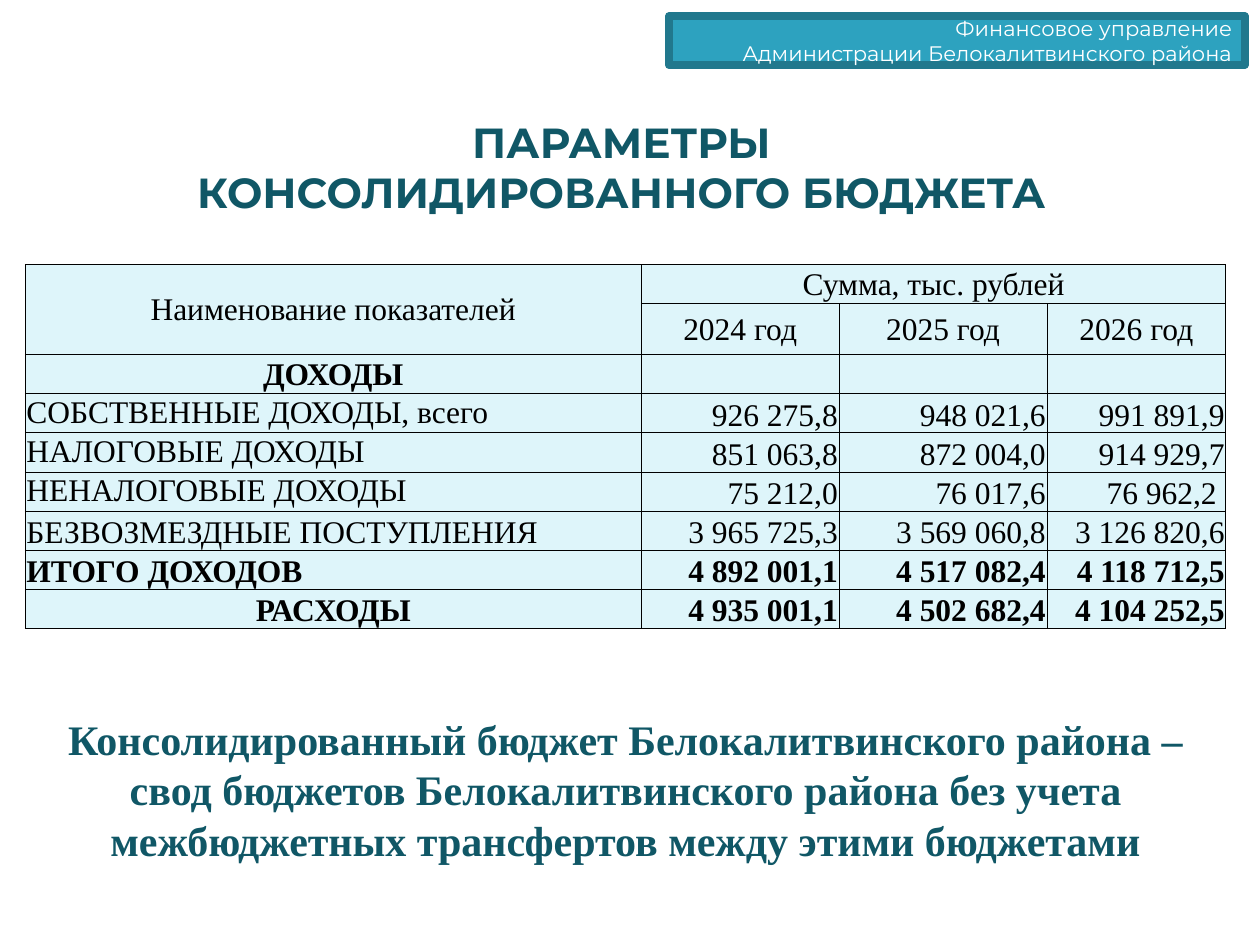
from dataclasses import dataclass

from lxml.etree import SubElement
from pptx import Presentation
from pptx.dml.color import RGBColor
from pptx.enum.shapes import MSO_SHAPE
from pptx.enum.text import MSO_ANCHOR, PP_ALIGN
from pptx.oxml.ns import qn
from pptx.util import Inches, Pt


@dataclass(frozen=True)
class Theme:
    heading: str = "105766"
    banner: str = "2DA2BF"
    banner_line: str = "21788D"
    banner_text: str = "FFFFFF"
    cell: str = "DEF5FA"
    ink: str = "000000"
    sans: str = "Montserrat"
    serif: str = "Times New Roman"
    large: int = 24
    medium: int = 18
    small: int = 12


theme = Theme()
deck = Presentation()
deck.slide_width, deck.slide_height = Inches(10), Inches(7.5)
page = deck.slides.add_slide(deck.slide_layouts[6])


def place(left, top, width, height):
    across, down = deck.slide_width, deck.slide_height
    return [round(part) for part in (left * across, top * down, width * across, height * down)]


def write(frame, text, font=theme.serif, size=theme.medium, color=theme.ink,
          bold=False, align=PP_ALIGN.CENTER):
    frame.word_wrap = True
    for index, line in enumerate(text.split("\n")):
        para = frame.paragraphs[0] if index == 0 else frame.add_paragraph()
        para.alignment = align
        span = para.add_run()
        span.text = line
        span.font.name = font
        span.font.size = Pt(size)
        span.font.bold = bold
        span.font.color.rgb = RGBColor.from_string(color)


title = page.shapes.add_textbox(*place(0.122, 0.09, 0.732, 0.173))
title.text_frame.vertical_anchor = MSO_ANCHOR.MIDDLE
title.text_frame.margin_left = Inches(0.2)
write(title.text_frame, "ПАРАМЕТРЫ КОНСОЛИДИРОВАННОГО БЮДЖЕТА",
      font=theme.sans, size=theme.large, color=theme.heading, bold=True)

banner = page.shapes.add_shape(MSO_SHAPE.RECTANGLE, *place(0.531, 0.017, 0.457, 0.052))
banner.shadow.inherit = False
banner.fill.solid()
banner.fill.fore_color.rgb = RGBColor.from_string(theme.banner)
banner.line.color.rgb = RGBColor.from_string(theme.banner_line)
banner.line.width = Pt(4.33)
banner.text_frame.vertical_anchor = MSO_ANCHOR.MIDDLE
write(banner.text_frame, "Финансовое управление\nАдминистрации Белокалитвинского района",
      font=theme.sans, size=theme.small, color=theme.banner_text, align=PP_ALIGN.RIGHT)

budget = [
    ["Наименование показателей", "Сумма, тыс. рублей", "", ""],
    ["", "2024 год", "2025 год", "2026 год"],
    ["ДОХОДЫ", "", "", ""],
    ["СОБСТВЕННЫЕ ДОХОДЫ, всего", "926 275,8", "948 021,6", "991 891,9"],
    ["НАЛОГОВЫЕ ДОХОДЫ", "851 063,8", "872 004,0", "914 929,7"],
    ["НЕНАЛОГОВЫЕ ДОХОДЫ", "75 212,0", "76 017,6", "76 962,2 "],
    ["БЕЗВОЗМЕЗДНЫЕ ПОСТУПЛЕНИЯ", "3 965 725,3", "3 569 060,8", "3 126 820,6"],
    ["ИТОГО ДОХОДОВ", "4 892 001,1", "4 517 082,4", "4 118 712,5"],
    ["РАСХОДЫ", "4 935 001,1", "4 502 682,4", "4 104 252,5"],
]
bold_labels = {"ДОХОДЫ", "ИТОГО ДОХОДОВ", "РАСХОДЫ"}
centred_labels = {"ДОХОДЫ", "РАСХОДЫ"}
header_rows = 2
column_shares = [0.489, 0.157, 0.165, 0.142]
header_shares = [0.04, 0.054]
table_share = 0.38
body_share = (table_share - sum(header_shares)) / (len(budget) - header_rows)
row_shares = header_shares + [body_share] * (len(budget) - header_rows)

table = page.shapes.add_table(len(budget), len(column_shares),
                              *place(0.02, 0.28, sum(column_shares), table_share)).table
table.first_row = table.horz_banding = False
for column, share in zip(table.columns, column_shares):
    column.width = round(share * deck.slide_width)
for row, share in zip(table.rows, row_shares):
    row.height = round(share * deck.slide_height)
table.cell(0, 0).merge(table.cell(1, 0))
table.cell(0, 1).merge(table.cell(0, 3))

for row_index, values in enumerate(budget):
    label = values[0]
    for column_index, value in enumerate(values):
        cell = table.cell(row_index, column_index)
        cell.margin_left = cell.margin_right = cell.margin_top = Inches(0.01)
        cell.margin_bottom = 0
        if row_index <= header_rows:
            cell.vertical_anchor = MSO_ANCHOR.MIDDLE
        elif column_index == 0 and row_index <= 5:
            cell.vertical_anchor = MSO_ANCHOR.TOP
        else:
            cell.vertical_anchor = MSO_ANCHOR.BOTTOM
        if row_index < header_rows or value in centred_labels:
            align = PP_ALIGN.CENTER
        else:
            align = PP_ALIGN.RIGHT if column_index else PP_ALIGN.LEFT
        if value:
            write(cell.text_frame, value, bold=label in bold_labels, align=align)
        properties = cell._tc.get_or_add_tcPr()
        for side in ("a:lnL", "a:lnR", "a:lnT", "a:lnB"):
            border = SubElement(properties, qn(side), w=str(Pt(0.5)))
            paint = SubElement(border, qn("a:solidFill"))
            SubElement(paint, qn("a:srgbClr"), val=theme.ink)
        cell.fill.solid()
        cell.fill.fore_color.rgb = RGBColor.from_string(theme.cell)

summary = page.shapes.add_textbox(*place(0.02, 0.72, 0.953, 0.23))
summary.text_frame.vertical_anchor = MSO_ANCHOR.MIDDLE
write(summary.text_frame,
      "Консолидированный бюджет Белокалитвинского района – свод бюджетов "
      "Белокалитвинского района без учета межбюджетных трансфертов между этими бюджетами",
      size=theme.large, color=theme.heading, bold=True)

deck.save("out.pptx")
